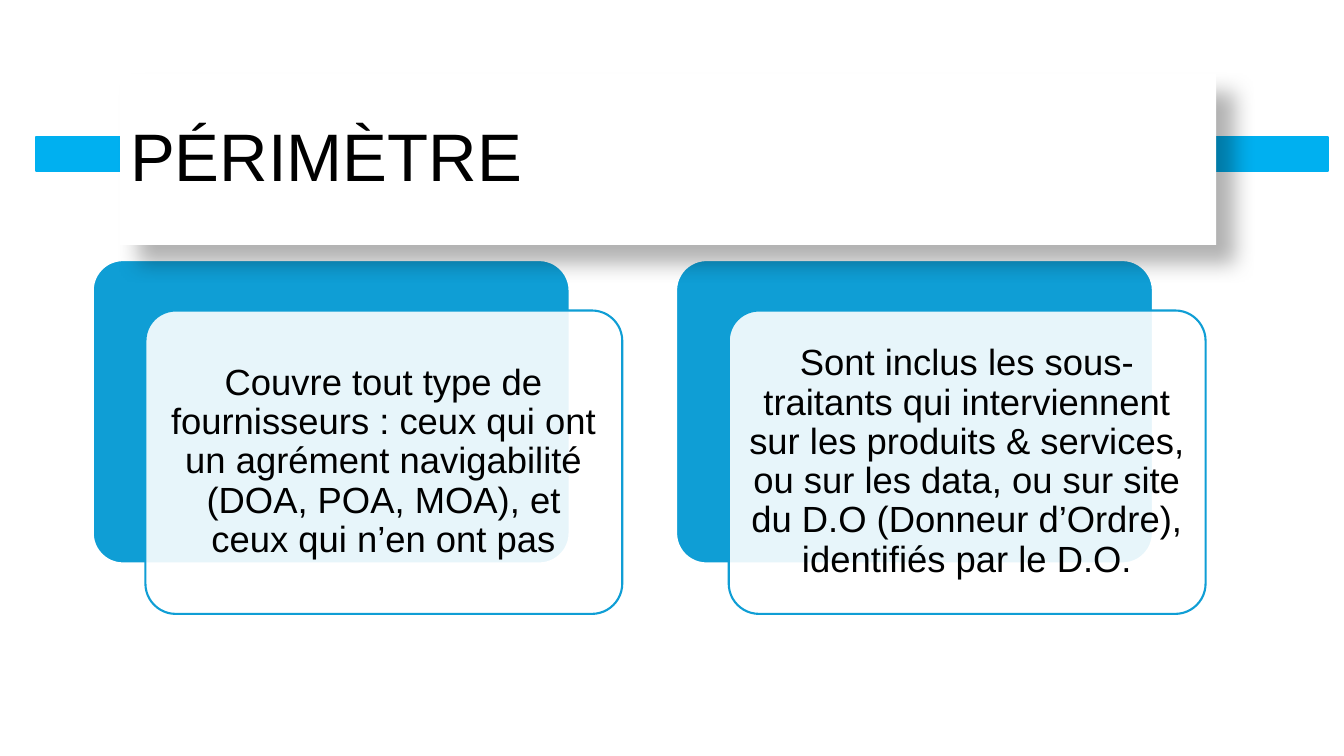
from lxml import etree
from pptx import Presentation
from pptx import util as u
from pptx.dml.color import RGBColor
from pptx.enum import shapes, text
from pptx.oxml import ns

WIDTH, HEIGHT = u.Inches(13.33), u.Inches(7.5)
COLORS = {"white": "FFFFFF", "black": "000000", "card": "0F9ED5", "band": "00B0F0"}
FONT = "Arial"
CARD_LEFT, CARD_TOP = 6.9, 34.4
CARD_SIZE = (35.48, 40.13)
CARD_STEP = 43.4
FRONT_SHIFT = (3.92, 6.67)
CARD_TEXTS = [
    "Couvre tout type de fournisseurs : ceux qui ont un agrément navigabilité "
    "(DOA, POA, MOA), et ceux qui n’en ont pas",
    "Sont inclus les sous-traitants qui interviennent sur les produits & services, "
    "ou sur les data, ou sur site du D.O (Donneur d’Ordre), identifiés par le D.O.",
]


def rgb(name):
    return RGBColor.from_string(COLORS[name])


def place(left, top, width, height):
    return (int(WIDTH * left / 100), int(HEIGHT * top / 100),
            int(WIDTH * width / 100), int(HEIGHT * height / 100))


def add_child(parent, tag, **attributes):
    return etree.SubElement(parent, ns.qn(tag), attributes)


def add_box(slide, kind, box, fill, line):
    shape = slide.shapes.add_shape(kind, *place(*box))
    shape.shadow.inherit = False
    shape.fill.solid()
    shape.fill.fore_color.rgb = rgb(fill)
    shape.line.color.rgb = rgb(line)
    shape.line.width = u.Pt(1.5)
    return shape


def write(shape, words, size, alignment):
    frame = shape.text_frame
    frame.word_wrap = True
    frame.auto_size = text.MSO_AUTO_SIZE.NONE
    frame.vertical_anchor = text.MSO_ANCHOR.MIDDLE
    paragraph = frame.paragraphs[0]
    paragraph.alignment = alignment
    paragraph.line_spacing = 0.9
    paragraph.space_before = u.Pt(0)
    run = paragraph.add_run()
    run.text = words
    run.font.name = FONT
    run.font.size = u.Pt(size)
    run.font.color.rgb = rgb("black")


def add_card(slide, left, words):
    rounded = shapes.MSO_SHAPE.ROUNDED_RECTANGLE
    back = add_box(slide, rounded, (left, CARD_TOP, *CARD_SIZE), "card", "white")
    front_box = (left + FRONT_SHIFT[0], CARD_TOP + FRONT_SHIFT[1], *CARD_SIZE)
    front = add_box(slide, rounded, front_box, "white", "card")
    for shape in (back, front):
        shape.adjustments[0] = 0.1
    color = front.fill._xPr.find(ns.qn("a:solidFill"))[0]
    add_child(color, "a:alpha", val="90000")
    frame = front.text_frame
    frame.margin_left = frame.margin_right = u.Inches(0.11)
    frame.margin_top = frame.margin_bottom = u.Inches(0.11)
    write(front, words, 26, text.PP_ALIGN.CENTER)


def cast_shadow(shape):
    shape.shadow.inherit = False
    effects = shape._element.spPr.find(ns.qn("a:effectLst"))
    shadow = add_child(effects, "a:outerShdw", blurRad=str(u.Pt(15)), dist=str(u.Pt(18)),
                       dir="2700000", algn="tl", rotWithShape="0")
    color = add_child(shadow, "a:srgbClr", val=COLORS["black"])
    add_child(color, "a:alpha", val="30000")


def set_title(slide, words, box):
    title = slide.shapes.title
    title.left, title.top, title.width, title.height = place(*box)
    title.fill.solid()
    title.fill.fore_color.rgb = rgb("white")
    title.line.fill.background()
    cast_shadow(title)
    write(title, words, 48, text.PP_ALIGN.LEFT)
    slide.shapes._spTree.append(title._element)


def main():
    presentation = Presentation()
    presentation.slide_width, presentation.slide_height = WIDTH, HEIGHT
    slide = presentation.slides.add_slide(presentation.slide_layouts[5])
    for column, words in enumerate(CARD_TEXTS):
        add_card(slide, CARD_LEFT + column * CARD_STEP, words)
    add_box(slide, shapes.MSO_SHAPE.RECTANGLE, (2.7, 18.13, 96.1, 4.53), "band", "band")
    set_title(slide, "PÉRIMÈTRE", (8.93, 9.73, 81.55, 22.67))
    presentation.save("out.pptx")


if __name__ == "__main__":
    main()
